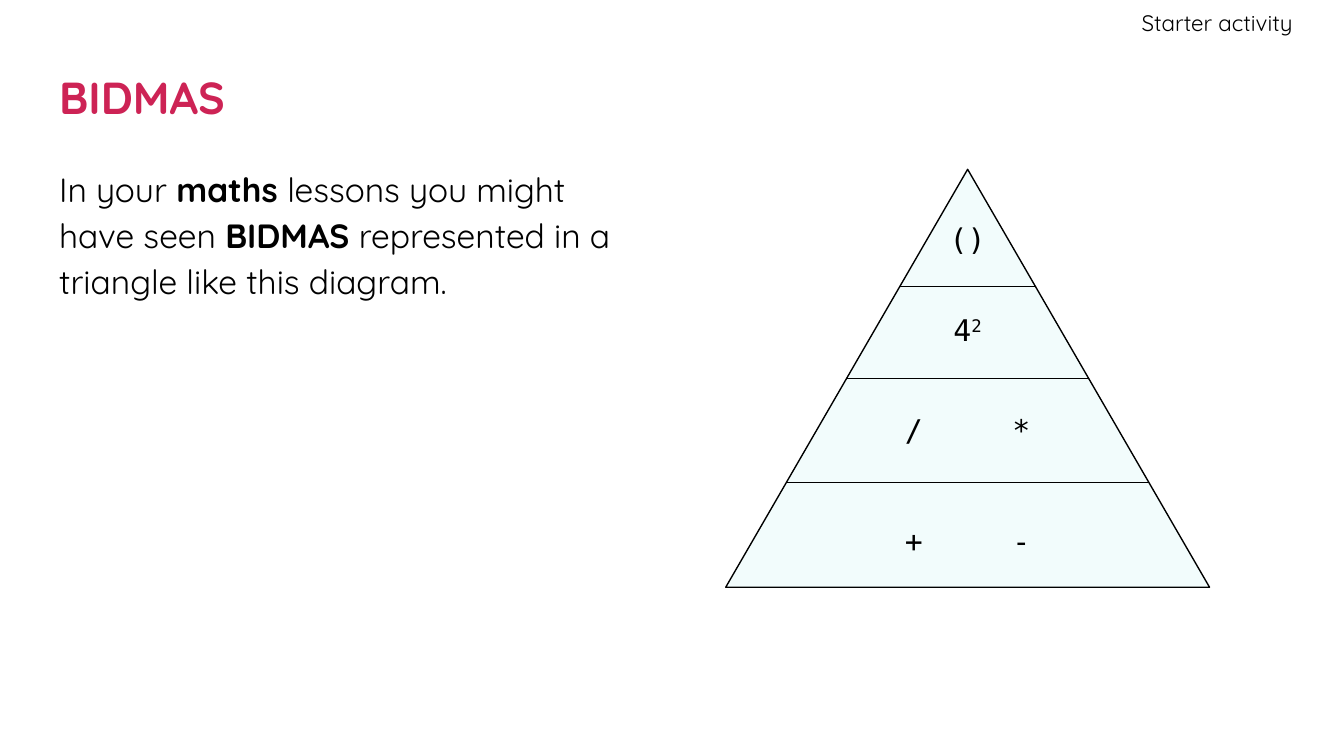
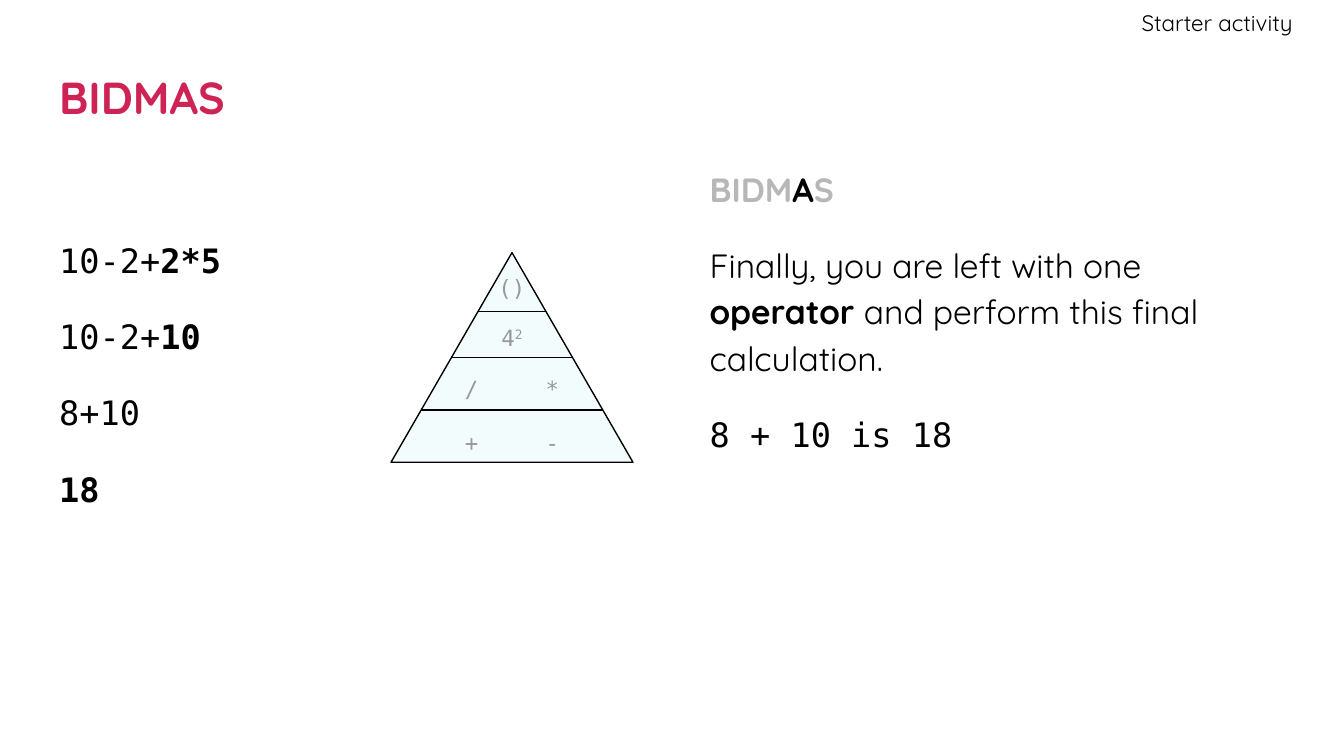
import pptx
import pptx.util
import pptx.dml.color
import pptx.enum.shapes
import pptx.enum.text
import pptx.oxml.ns
from lxml import etree

Inches = pptx.util.Inches
Pt = pptx.util.Pt
Align = pptx.enum.text.PP_ALIGN
Anchor = pptx.enum.text.MSO_ANCHOR
Kind = pptx.enum.shapes.MSO_SHAPE
qn = pptx.oxml.ns.qn

WIDE = 10
HIGH = WIDE * 9 / 16
HUES = {"ink": "000000", "title": "CD2355", "pale": "F2FCFC",
        "fade": "B7B7B7", "dim": "999999"}
SANS = "Quicksand"
MONO = "DejaVu Sans Mono"

TITLE = {"name": SANS, "size": Pt(24), "bold": True, "hue": "title"}
NOTE = {"name": SANS, "size": Pt(12), "bold": False, "hue": "ink"}
PLAIN = {"name": SANS, "size": Pt(18), "bold": False, "hue": "ink"}
BOLD = {**PLAIN, "bold": True}
FADE = {**BOLD, "hue": "fade"}
CODE = {**PLAIN, "name": MONO}
STRONG = {**CODE, "bold": True}

CUTS = (0.28, 0.5, 0.75)
SIGNS = (("()",), ("4²",), ("/", "*"), ("+", "-"))

SLIDES = [
    {
        "layout": 1,
        "bodies": [
            ((0.34, 1.11, 4.48, 4), [
                [("In your ", PLAIN), ("maths ", BOLD),
                 ("lessons you might have seen ", PLAIN), ("BIDMAS ", BOLD),
                 ("represented in a triangle like this diagram.", PLAIN)],
            ]),
        ],
        "cone": {"at": (5.4, 1.26, 3.6, 3.11), "mid": 7.2, "size": 16,
                 "hue": "ink", "tops": (1.54, 2.22, 2.96, 3.79)},
    },
    {
        "layout": 3,
        "bodies": [
            ((0.34, 1.64, 4.48, 3.47), [
                [("10-2+", CODE), ("2*5", STRONG)],
                [("10-2+", CODE), ("10", STRONG)],
                [("8+10", CODE)],
                [("18", STRONG)],
            ]),
            ((5.18, 1.11, 4.48, 4), [
                [("BIDM", FADE), ("A", BOLD), ("S", FADE)],
                [("Finally, you are left with one ", PLAIN), ("operator ", BOLD),
                 ("and perform this final calculation.", PLAIN)],
                [("8 + 10 is 18", CODE)],
            ]),
        ],
        "cone": {"at": (2.91, 1.88, 1.8, 1.56), "mid": 3.81, "size": 12,
                 "hue": "dim", "tops": (1.94, 2.31, 2.69, 3.09)},
    },
]


def tint(hue):
    return pptx.dml.color.RGBColor.from_string(HUES[hue])


def apply(item, form):
    for key, val in form.items():
        if key == "hue":
            item.color.rgb = tint(val)
        else:
            setattr(item, key, val)


def place(shape, box):
    for key, val in zip(("left", "top", "width", "height"), box):
        setattr(shape, key, Inches(val))


def write(shape, paras, align=Align.LEFT, anchor=Anchor.TOP, right=0.1,
          lead=1.0, gap=0):
    frame = shape.text_frame
    apply(frame, {
        "word_wrap": True, "auto_size": pptx.enum.text.MSO_AUTO_SIZE.NONE,
        "vertical_anchor": anchor, "margin_left": Inches(0.1),
        "margin_right": Inches(right), "margin_top": Inches(0.1),
        "margin_bottom": Inches(0.1)})
    for i, runs in enumerate(paras):
        para = frame.add_paragraph() if i else frame.paragraphs[0]
        apply(para, {"alignment": align, "line_spacing": lead,
                     "space_before": Pt(gap if i else 0), "space_after": Pt(0)})
        if shape.is_placeholder:
            props = para._p.get_or_add_pPr()
            props.set("marL", "0")
            props.set("indent", "0")
            etree.SubElement(props, qn("a:buNone"))
        for text, form in runs:
            run = para.add_run()
            run.text = text
            apply(run.font, form)


def label(shapes, box, text, form, **opts):
    area = shapes.add_textbox(*map(Inches, box))
    runs = [(text, form)]
    if text.endswith("²"):
        runs = [(text[:-1], form), ("2", form)]
    write(area, [runs], **opts)
    if len(runs) > 1:
        power = area.text_frame.paragraphs[0].runs[1]
        power._r.get_or_add_rPr().set("baseline", "30000")


def draw_cone(slide, at, mid, size, hue, tops):
    left, top, wide, high = at
    shapes = slide.shapes.add_group_shape().shapes
    cone = shapes.add_shape(Kind.ISOSCELES_TRIANGLE, *map(Inches, at))
    cone.shadow.inherit = False
    cone.fill.solid()
    cone.fill.fore_color.rgb = tint("pale")
    apply(cone.line, {"hue": "ink", "width": Pt(0.75)})
    for cut in CUTS:
        half, y = cut * wide / 2, top + cut * high
        ends = (left + wide / 2 - half, y, left + wide / 2 + half, y)
        rule = shapes.add_connector(
            pptx.enum.shapes.MSO_CONNECTOR.STRAIGHT, *map(Inches, ends))
        apply(rule.line, {"hue": "ink", "width": Pt(0.75)})
        etree.SubElement(rule._element.spPr, qn("a:effectLst"))
    form = {"name": MONO, "size": Pt(size), "bold": False, "hue": hue}
    step = size / 20
    for y, signs in zip(tops, SIGNS):
        for i, sign in enumerate(signs):
            x = mid + (i - (len(signs) - 1) / 2) * step
            label(shapes, (x - 0.3, y, 0.6, size * 0.03), sign, form,
                  align=Align.CENTER)


def build(deck, page):
    slide = deck.slides.add_slide(deck.slide_layouts[page["layout"]])
    title, *bodies = slide.placeholders
    place(title, (0.34, 0.34, 9.32, 0.76))
    write(title, [[("BIDMAS", TITLE)]], anchor=Anchor.MIDDLE)
    for body, (box, paras) in zip(bodies, page["bodies"]):
        place(body, box)
        write(body, paras, lead=1.15, gap=16)
    label(slide.shapes, (7.48, 0, 2.14, 0.34), "Starter activity", NOTE,
          align=Align.RIGHT, anchor=Anchor.MIDDLE, right=0)
    draw_cone(slide, **page["cone"])


def main():
    deck = pptx.Presentation()
    apply(deck, {"slide_width": Inches(WIDE), "slide_height": Inches(HIGH)})
    for page in SLIDES:
        build(deck, page)
    deck.save("out.pptx")


if __name__ == "__main__":
    main()
